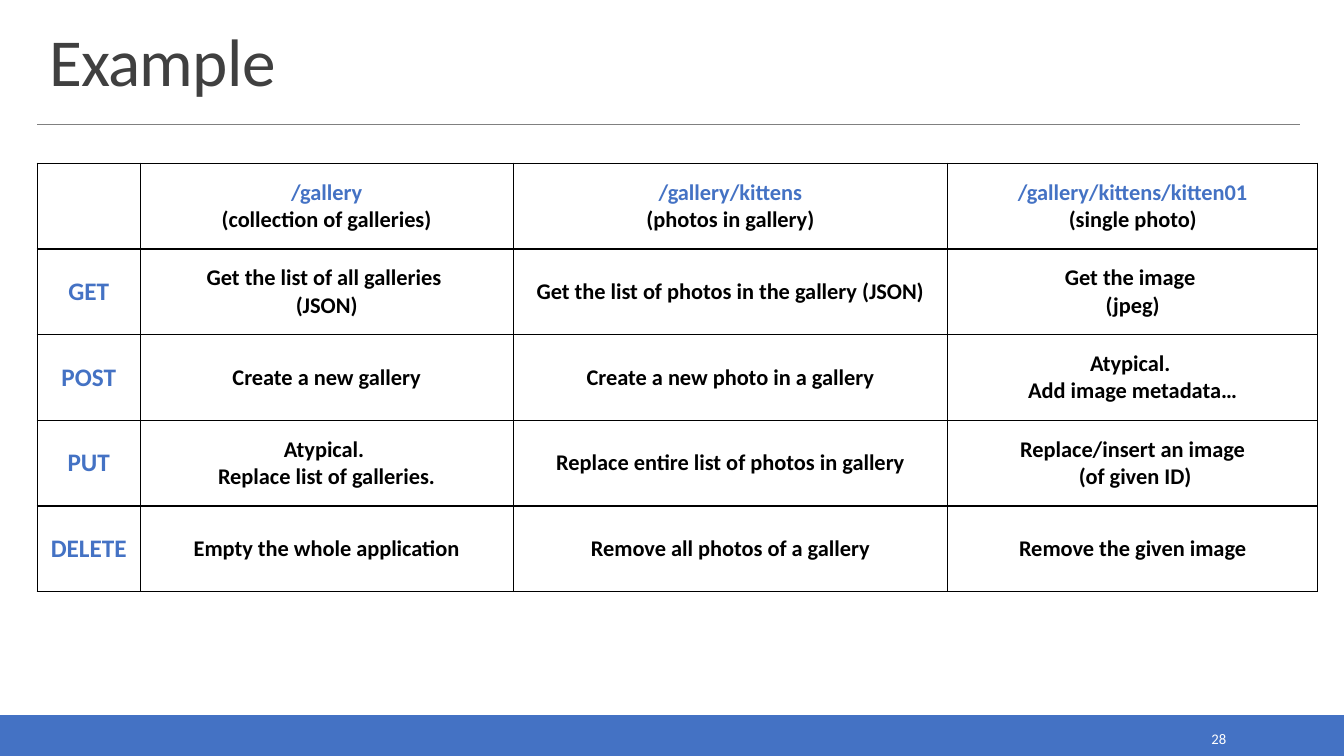
import pptx
import pptx.dml.color
import pptx.enum.shapes
import pptx.enum.text
import pptx.oxml
import pptx.util
from pptx.util import Inches

BLUE, BLACK, WHITE = "4472C4", "000000", "FFFFFF"
DARK, GREY = "404040", "808080"
ALIGN = pptx.enum.text.PP_ALIGN
ANCHOR = pptx.enum.text.MSO_ANCHOR

RESOURCES = [
    ("/gallery", "(collection of galleries)"),
    ("/gallery/kittens", "(photos in gallery)"),
    ("/gallery/kittens/kitten01", "(single photo)"),
]
METHODS = {
    "GET": ["Get the list of all galleries \n(JSON)",
            "Get the list of photos in the gallery (JSON)",
            "Get the image \n(jpeg)"],
    "POST": ["Create a new gallery",
             "Create a new photo in a gallery",
             "Atypical. \nAdd image metadata…"],
    "PUT": ["Atypical. \nReplace list of galleries.",
            "Replace entire list of photos in gallery",
            "Replace/insert an image\n (of given ID)"],
    "DELETE": ["Empty the whole application",
               "Remove all photos of a gallery",
               "Remove the given image"],
}
COLUMN_WIDTHS = [1.02, 3.7, 4.31, 3.67]
ROW_HEIGHT = 0.85


def rgb(value):
    return pptx.dml.color.RGBColor.from_string(value)


def add_text(para, text, size, color, bold=False, align=ALIGN.LEFT):
    """Add one run per line of text, with line breaks between them."""
    para.alignment = align
    for index, line in enumerate(text.split("\n")):
        if index:
            para.add_line_break()
        span = para.add_run()
        span.text = line
        span.font.name = "Calibri"
        span.font.size = pptx.util.Pt(size)
        span.font.bold = bold
        span.font.color.rgb = rgb(color)
    return span


def add_text_box(page, left, top, width, height, anchor):
    box = page.shapes.add_textbox(Inches(left), Inches(top), Inches(width), Inches(height))
    box.text_frame.word_wrap = True
    box.text_frame.vertical_anchor = anchor
    return box.text_frame.paragraphs[0]


def add_header(page, left, top, width, height):
    # Rule along the bottom of the header
    rule = page.shapes.add_connector(
        pptx.enum.shapes.MSO_CONNECTOR.STRAIGHT,
        Inches(left), Inches(top + height), Inches(left + width), Inches(top + height))
    rule.line.color.rgb = rgb(GREY)
    rule.line.width = pptx.util.Pt(0.5)
    properties = rule._element.spPr
    properties.append(pptx.oxml.parse_xml(
        '<a:effectLst xmlns:a="http://schemas.openxmlformats.org/drawingml/2006/main"/>'))
    # Title, slightly tightened
    para = add_text_box(page, left + 0.02, top, width, height - 0.19, ANCHOR.BOTTOM)
    para.line_spacing = 0.85
    span = add_text(para, "Example", 48, DARK)
    span.font._element.set("spc", "-50")


def add_footer(page, left, top, width, height):
    # Colour band
    band = page.shapes.add_shape(
        pptx.enum.shapes.MSO_SHAPE.RECTANGLE,
        Inches(left), Inches(top), Inches(width), Inches(height))
    band.shadow.inherit = False
    band.fill.solid()
    band.fill.fore_color.rgb = rgb(BLUE)
    band.line.color.rgb = rgb(BLUE)
    band.line.width = pptx.util.Pt(1.25)
    # Page number
    para = add_text_box(page, left + width - 2.5, top + 0.09, 1.43, 0.28, ANCHOR.MIDDLE)
    add_text(para, "28", 10.5, WHITE, align=ALIGN.RIGHT)


def style_cell(cell):
    cell.vertical_anchor = ANCHOR.MIDDLE
    properties = cell._tc.get_or_add_tcPr()
    for side in ("lnL", "lnR", "lnT", "lnB"):
        properties.append(pptx.oxml.parse_xml(
            f'<a:{side} xmlns:a="http://schemas.openxmlformats.org/drawingml/2006/main"'
            f' w="12700"><a:solidFill><a:srgbClr val="{BLACK}"/></a:solidFill></a:{side}>'))
    cell.fill.background()


def add_method_table(page, left, top):
    rows, columns = len(METHODS) + 1, len(COLUMN_WIDTHS)
    table = page.shapes.add_table(
        rows, columns, Inches(left), Inches(top),
        Inches(sum(COLUMN_WIDTHS)), Inches(rows * ROW_HEIGHT)).table
    table.first_row = table.horz_banding = False
    for column, width in zip(table.columns, COLUMN_WIDTHS):
        column.width = Inches(width)
    for row in table.rows:
        row.height = Inches(ROW_HEIGHT)
    for cell in table.iter_cells():
        style_cell(cell)

    # Resource headings
    for column, (address, meaning) in enumerate(RESOURCES, 1):
        frame = table.cell(0, column).text_frame
        add_text(frame.paragraphs[0], address, 16, BLUE, True, ALIGN.CENTER)
        add_text(frame.add_paragraph(), meaning, 16, BLACK, True, ALIGN.CENTER)

    # One row per method
    for row, (method, actions) in enumerate(METHODS.items(), 1):
        for column, text in enumerate([method] + actions):
            size, color = (16, BLACK) if column else (18, BLUE)
            para = table.cell(row, column).text_frame.paragraphs[0]
            add_text(para, text, size, color, True, ALIGN.CENTER)


def main():
    deck = pptx.Presentation()
    deck.slide_width, deck.slide_height = Inches(13.33), Inches(7.5)
    page = deck.slides.add_slide(deck.slide_layouts[6])
    add_footer(page, 0, 7.1, 13.33, 0.4)
    add_header(page, 0.37, 0.2, 12.52, 1.03)
    add_method_table(page, 0.37, 1.62)
    deck.save("out.pptx")


if __name__ == "__main__":
    main()
